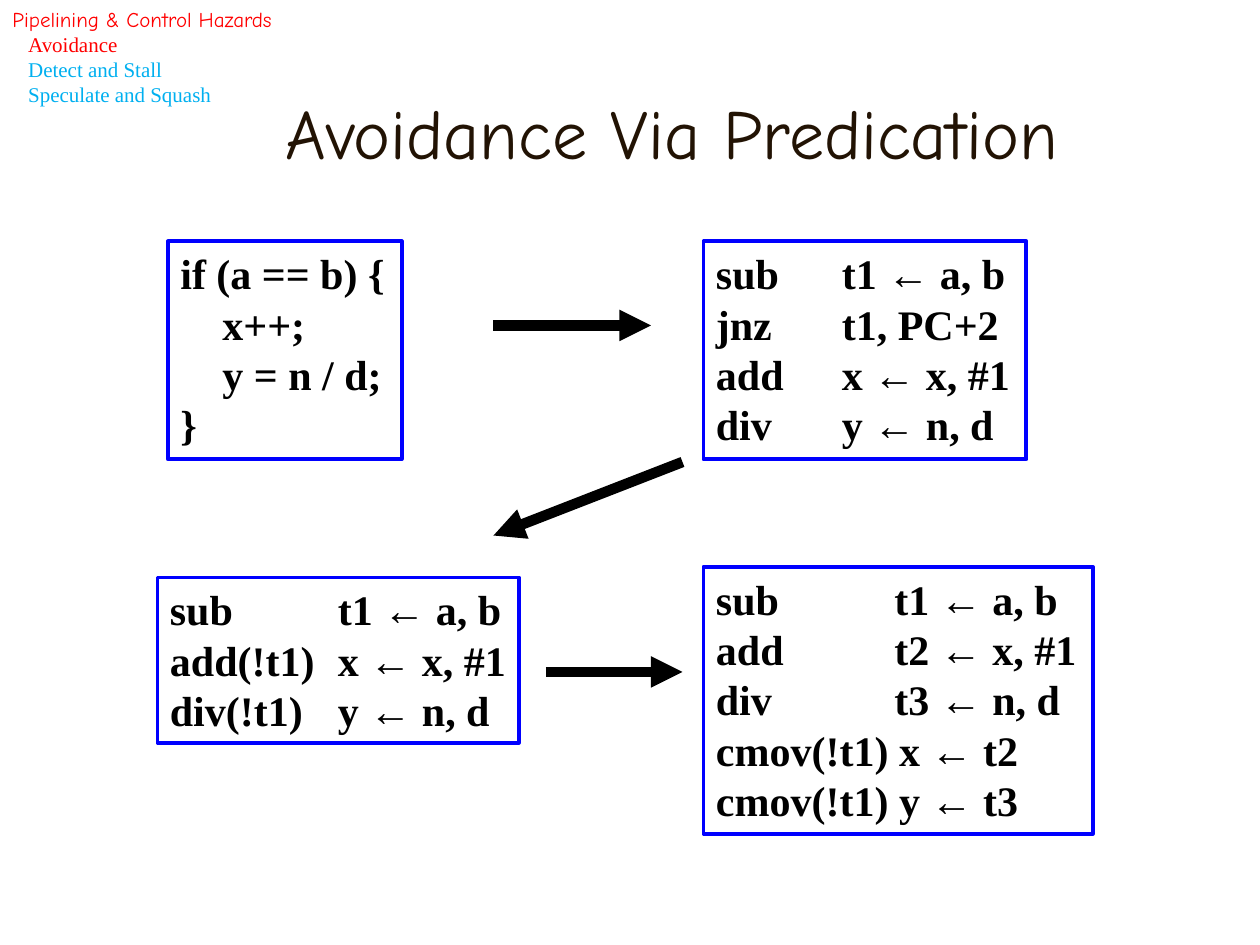
from pptx import Presentation
from pptx.dml.color import RGBColor
from pptx.enum.shapes import MSO_CONNECTOR as Connector, MSO_SHAPE as Shape
from pptx.enum.text import MSO_ANCHOR as Anchor, PP_ALIGN as Align
from pptx.oxml.ns import qn
from pptx.util import Pt
from lxml.etree import SubElement

BLACK = RGBColor(0x00, 0x00, 0x00)
BLUE = RGBColor(0x00, 0x00, 0xFF)
BROWN = RGBColor(0x22, 0x13, 0x04)
RED = RGBColor(0xFF, 0x00, 0x00)
SKY = RGBColor(0x00, 0xB0, 0xF0)
SERIF = "Times New Roman"
COMIC = "Comic Neue"


def style(para, name, size, color, bold=False):
    for span in para.runs:
        font = span.font
        font.name, font.size, font.bold = name, Pt(size), bold
        font.color.rgb = color


def indent(para, left, tab=72):
    """Set the left margin and the tab spacing, both in points."""
    props = para._p.get_or_add_pPr()
    props.set("marL", str(Pt(left)))
    props.set("indent", "0")
    props.set("defTabSz", str(Pt(tab)))


deck = Presentation()
deck.slide_width, deck.slide_height = Pt(720), Pt(540)
page = deck.slides.add_slide(deck.slide_layouts[5])

title = page.shapes.title
title.left, title.top, title.width, title.height = Pt(84), Pt(30), Pt(600), Pt(90)
title.text_frame.text = "Avoidance Via Predication"
title.text_frame.vertical_anchor = Anchor.MIDDLE
heading = title.text_frame.paragraphs[0]
heading.alignment = Align.CENTER
style(heading, COMIC, 40, BROWN)

# Code boxes: left, top, width, height, tab spacing, lines of (left margin, text)
code_boxes = [
    (96, 138, 133.5, 124.5, 72,
     [(0, "if (a == b) {"), (24, "x++;"), (24, "y = n / d;"), (0, "}")]),
    (402, 138, 184.5, 124.5, 72,
     [(0, "sub\tt1 ← a, b"), (0, "jnz\tt1, PC+2"),
      (0, "add\tx ← x, #1"), (0, "div\ty ← n, d")]),
    (90, 330, 206.5, 94.5, 96,
     [(0, "sub\tt1 ← a, b"), (0, "add(!t1)\tx ← x, #1"), (0, "div(!t1)\ty ← n, d")]),
    (402, 324, 222.5, 152.5, 102,
     [(0, "sub\tt1 ← a, b"), (0, "add\tt2 ← x, #1"), (0, "div\tt3 ← n, d"),
      (0, "cmov(!t1) x ← t2"), (0, "cmov(!t1) y ← t3")]),
]
for left, top, width, height, tab, lines in code_boxes:
    box = page.shapes.add_shape(Shape.RECTANGLE, Pt(left), Pt(top), Pt(width), Pt(height))
    box.shadow.inherit = False
    box.fill.background()
    box.line.color.rgb = BLUE
    box.line.width = Pt(2.25)
    frame = box.text_frame
    frame.word_wrap = False
    frame.vertical_anchor = Anchor.TOP
    frame.text = "\n".join(text for margin, text in lines)
    for para, (margin, text) in zip(frame.paragraphs, lines):
        para.alignment = Align.LEFT
        indent(para, margin, tab)
        style(para, SERIF, 24, BLACK, bold=True)

# Arrows from one program version to the next: x1, y1, x2, y2
for x1, y1, x2, y2 in [(282, 186, 372, 186), (390, 264, 282, 306), (312, 384, 390, 384)]:
    arrow = page.shapes.add_connector(Connector.STRAIGHT, Pt(x1), Pt(y1), Pt(x2), Pt(y2))
    arrow.line.color.rgb = BLACK
    arrow.line.width = Pt(6)
    SubElement(arrow.line._get_or_add_ln(), qn("a:tailEnd"), type="triangle")
    SubElement(arrow._element.spPr, qn("a:effectLst"))

outline = page.shapes.add_textbox(Pt(0), Pt(0), Pt(192), Pt(67.5))
outline.text_frame.word_wrap = True
topics = [
    ("Pipelining & Control Hazards", COMIC, RED),
    ("Avoidance", SERIF, RED),
    ("Detect and Stall", SERIF, SKY),
    ("Speculate and Squash", SERIF, SKY),
]
outline.text_frame.text = "\n".join(text for text, name, color in topics)
for row, (para, (text, name, color)) in enumerate(zip(outline.text_frame.paragraphs, topics)):
    if row > 0:
        para.level = 1
        indent(para, 9)
    style(para, name, 12, color)

deck.save("out.pptx")
